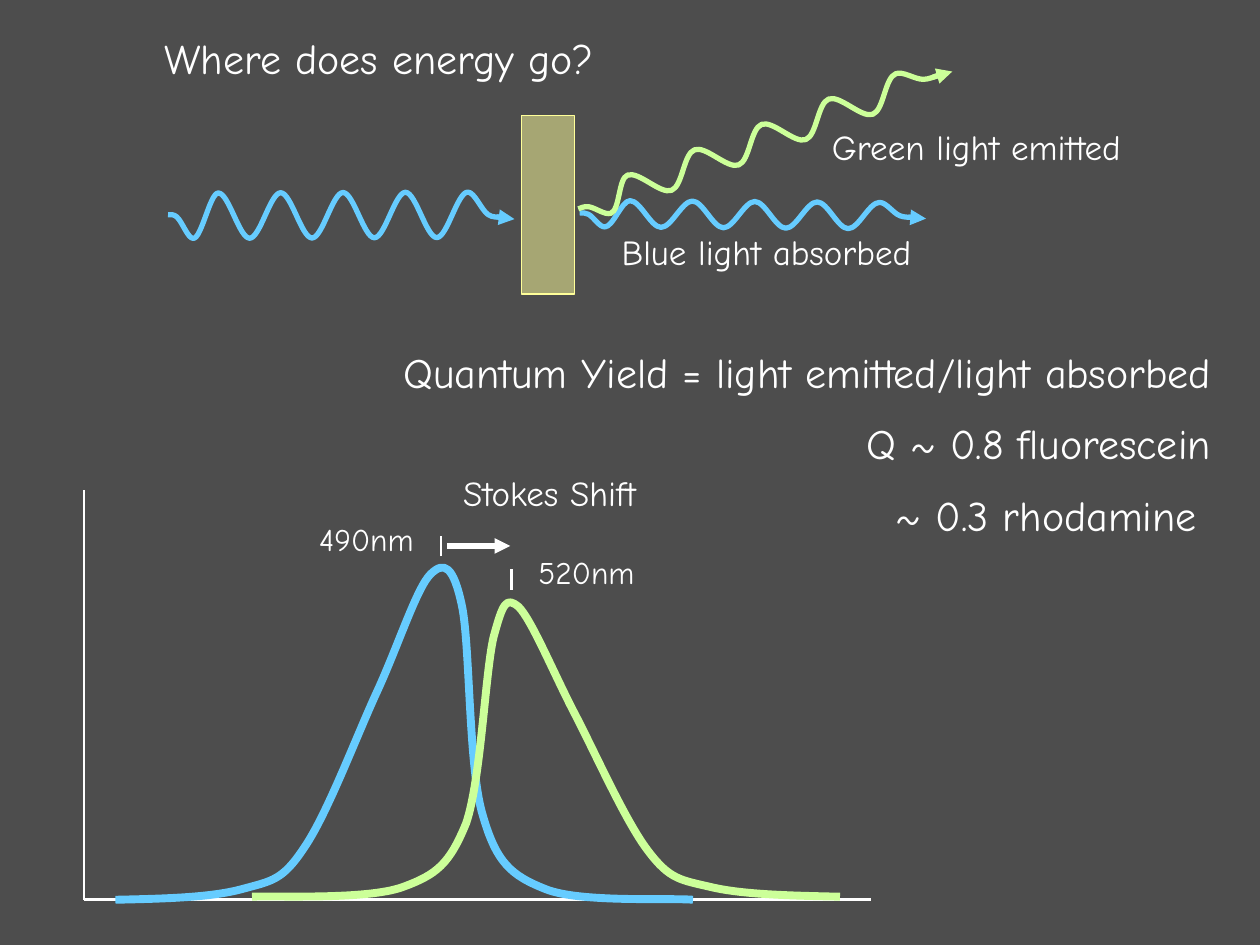
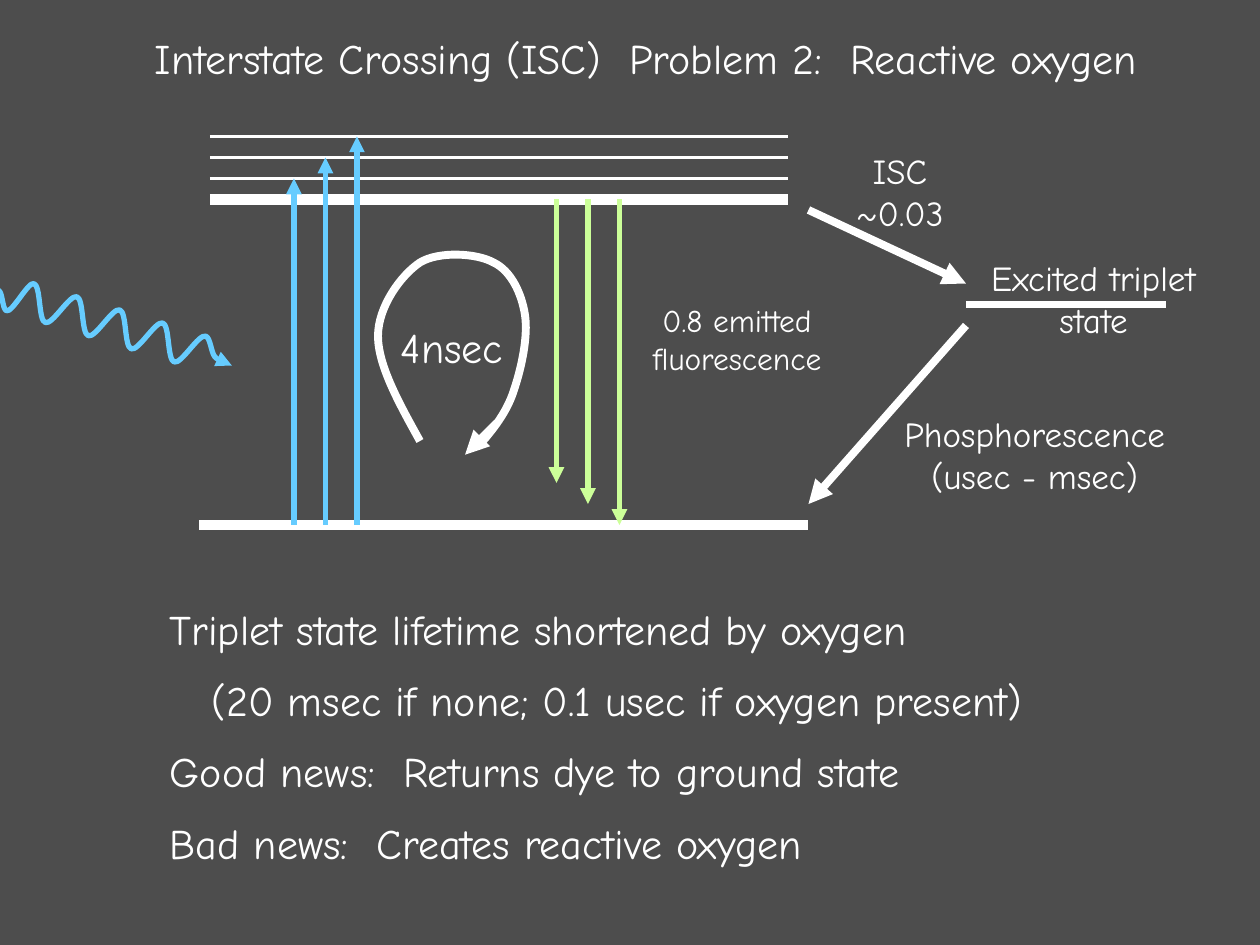
from dataclasses import dataclass
from math import cos, radians, sin

from lxml import etree
from pptx import Presentation
from pptx.dml.color import RGBColor
from pptx.enum.shapes import MSO_CONNECTOR, MSO_SHAPE
from pptx.enum.text import MSO_ANCHOR, PP_ALIGN
from pptx.oxml.ns import qn
from pptx.util import Inches, Pt


@dataclass(frozen=True)
class Theme:
    background: str = "4D4D4D"
    white: str = "FFFFFF"
    blue: str = "66CCFF"
    green: str = "CCFF99"
    sample: str = "FFFF99"
    font: str = "Comic Neue"
    title: int = 24
    label: int = 20
    small: int = 18
    thin: float = 1.5
    medium: float = 3
    thick: float = 4.5
    heavy: float = 6


THEME = Theme()
COLUMNS, ROWS = 120, 90
SLIDE_WIDTH, SLIDE_HEIGHT = Inches(10), Inches(7.5)

WAVE_LENGTH = 31.8
WAVE_KNOTS = [
    (0, -0.05, 0), (0.84, 0.05, 0.42), (2.4, 1, 0),
    *[(4.8 + 2.97 * turn, 1 if turn % 2 else -1, 0) for turn in range(9)],
    (30.5, 0, 0.31), (WAVE_LENGTH, 0.1, 0),
]

ABSORPTION = [
    (11, 85.7), (15.5, 85.6), (20, 85.5), (23, 84.7),
    (25.9, 83.9), (26.9, 83.9), (29, 80.7),
    (31.2, 77.5), (34, 70), (36, 65.7),
    (38, 61.3), (39.7, 56), (41, 54.7),
    (42.3, 53.4), (43.2, 53.9), (44, 57.7),
    (44.8, 61.5), (44.6, 73.2), (46, 77.7),
    (47.3, 82.2), (48.7, 83.4), (52, 84.7),
    (55.3, 86), (63.7, 85.5), (66, 85.7),
]

EMISSION = [
    (80, 85.4), (75.4, 85.3), (70.8, 85.2), (67.8, 84.5),
    (64.8, 83.8), (63.8, 83.8), (61.7, 81),
    (59.5, 78.1), (56.6, 71.5), (54.6, 67.7),
    (52.6, 63.8), (50.6, 59), (49.4, 57.8),
    (48.2, 56.8), (47.9, 57.4), (47, 60.7),
    (46.2, 64.2), (45.8, 74.3), (44.4, 78.4),
    (42.8, 82.3), (41.6, 83.3), (38.3, 84.5),
    (34.9, 85.7), (26.4, 85.3), (24, 85.4),
]

LIFETIME_LOOP = [
    (40, 42), (38, 38.4), (36, 34.8), (36, 32),
    (36, 29.2), (38.2, 26.2), (40, 25),
    (41.8, 23.9), (45.4, 24.1), (47, 25),
    (48.7, 25.8), (49.7, 28), (50, 30),
    (50.3, 32), (49.7, 34.9), (49, 37),
    (48.4, 39), (47.2, 40.6), (46, 42),
]


def column(value):
    return round(value * SLIDE_WIDTH / COLUMNS)


def row(value):
    return round(value * SLIDE_HEIGHT / ROWS)


def color(value):
    return RGBColor.from_string(value)


def set_line(shape, line_color, width):
    shape.line.color.rgb = color(line_color)
    shape.line.width = Pt(width)


def add_slide(presentation):
    slide = presentation.slides.add_slide(presentation.slide_layouts[6])
    slide.background.fill.solid()
    slide.background.fill.fore_color.rgb = color(THEME.background)
    return slide


def add_line(slide, start, end, line_color=THEME.white, width=THEME.thin, arrow=False):
    connector = slide.shapes.add_connector(
        MSO_CONNECTOR.STRAIGHT,
        column(start[0]), row(start[1]), column(end[0]), row(end[1]),
    )
    set_line(connector, line_color, width)
    if arrow:
        etree.SubElement(connector.line._get_or_add_ln(), qn("a:tailEnd"), type="triangle")
    etree.SubElement(connector._element.spPr, qn("a:effectLst"))


def bend_segments(curve):
    segments = list(curve._element.iter(qn("a:lnTo")))
    outline = segments[0].getparent()
    for first in range(0, len(segments), 3):
        bend = etree.SubElement(outline, qn("a:cubicBezTo"))
        for segment in segments[first:first + 3]:
            bend.append(segment[0])
            outline.remove(segment)


def add_curve(slide, controls, line_color, width):
    vertices = [(column(x), row(y)) for x, y in controls]
    builder = slide.shapes.build_freeform(*vertices[0])
    builder.add_line_segments(vertices[1:], close=False)
    curve = builder.convert_to_shape()
    bend_segments(curve)
    curve.shadow.inherit = False
    curve.fill.background()
    set_line(curve, line_color, width)


def add_wave(slide, center, amplitude, line_color, angle=0, scale=1):
    turn = radians(angle)

    def place(x, y):
        along, across = (x - WAVE_LENGTH / 2) * scale, y * amplitude
        return (center[0] + along * cos(turn) - across * sin(turn),
                center[1] + along * sin(turn) + across * cos(turn))

    controls = [place(*WAVE_KNOTS[0][:2])]
    for (x1, y1, slope1), (x2, y2, slope2) in zip(WAVE_KNOTS, WAVE_KNOTS[1:]):
        third = (x2 - x1) / 3
        controls += [
            place(x1 + third, y1 + slope1 * third),
            place(x2 - third, y2 - slope2 * third),
            place(x2, y2),
        ]
    add_curve(slide, controls, line_color, THEME.medium)
    add_line(slide, place(WAVE_LENGTH - 0.5, 0.1), place(WAVE_LENGTH + 1.2, 0.2),
             line_color, THEME.medium, arrow=True)


def add_text(slide, lines, box, size=THEME.label, align=PP_ALIGN.CENTER, gap=0):
    left, top, width, height = box
    shape = slide.shapes.add_textbox(column(left), row(top), column(width), row(height))
    text_frame = shape.text_frame
    text_frame.word_wrap = True
    text_frame.vertical_anchor = MSO_ANCHOR.MIDDLE
    text_frame.text = "\n".join(lines)
    for index, paragraph in enumerate(text_frame.paragraphs):
        paragraph.alignment = align
        if index and gap:
            paragraph.space_before = Pt(gap)
        for run in paragraph.runs:
            run.font.name = THEME.font
            run.font.size = Pt(size)
            run.font.color.rgb = color(THEME.white)
    return text_frame


def add_title(slide, text, left, width):
    add_text(slide, [text], (left, 2.05, width, 6.8), THEME.title)


def add_sample(slide, box):
    left, top, width, height = box
    sample = slide.shapes.add_shape(
        MSO_SHAPE.RECTANGLE, column(left), row(top), column(width), row(height))
    sample.shadow.inherit = False
    sample.fill.solid()
    sample.fill.fore_color.rgb = color(THEME.sample)
    fill_color = sample._element.spPr.find(qn("a:solidFill")).find(qn("a:srgbClr"))
    etree.SubElement(fill_color, qn("a:alpha"), val="50000")
    set_line(sample, THEME.sample, 0.75)


def add_peak_label(slide, text, peak, box):
    x, y = peak
    add_line(slide, (x, y), (x, y - 2))
    add_text(slide, [text], box, THEME.small)


def build_energy_slide(presentation):
    slide = add_slide(presentation)
    add_sample(slide, (49.7, 11, 5, 17))
    add_wave(slide, (31.9, 20.5), 2.16, THEME.blue, angle=-0.2)
    add_wave(slide, (71.1, 20.45), 1.26, THEME.blue, angle=0.4)
    add_text(slide, ["Blue light absorbed"], (56.75, 21, 32.5, 5.9))

    origin = (8, 85.7)
    add_line(slide, (8, 46.7), origin)
    add_line(slide, origin, (83, 85.7))
    add_curve(slide, ABSORPTION, THEME.blue, THEME.thick)
    add_peak_label(slide, "490nm", (42, 53), (29, 48.6, 11.8, 5.4))
    add_curve(slide, EMISSION, THEME.green, THEME.thick)
    add_peak_label(slide, "520nm", (48.7, 56.15), (49.95, 51.75, 11.8, 5.4))

    add_wave(slide, (72.2, 13.5), 1.42, THEME.green, angle=-20.7, scale=1.15)
    add_text(slide, ["Green light emitted"], (76.45, 11, 33.1, 5.9))
    add_line(slide, (42.6, 52), (48.6, 52), width=THEME.medium, arrow=True)
    add_text(slide, ["Stokes Shift"], (41, 44, 22.7, 5.9))
    add_title(slide, "Where does energy go?", 12.95, 46.3)
    add_text(slide, [
        "Quantum Yield = light emitted/light absorbed",
        "Q ~ 0.8 fluorescein",
        "~ 0.3 rhodamine ",
    ], (28.9, 30.45, 87.6, 23.5), THEME.title, PP_ALIGN.RIGHT, gap=12)


def build_crossing_slide(presentation):
    slide = add_slide(presentation)
    ground, excited = 50, 19
    add_line(slide, (19, ground), (77, ground), width=THEME.heavy)
    add_wave(slide, (10.4, 30.9), 1.62, THEME.blue, angle=17, scale=0.72)
    add_line(slide, (20, excited), (75, excited), width=THEME.heavy)
    for step in range(3):
        level = excited - 2 * (step + 1)
        absorbed, emitted = 28 + 3 * step, 53 + 3 * step
        add_line(slide, (20, level), (75, level))
        add_line(slide, (absorbed, ground), (absorbed, level),
                 THEME.blue, THEME.medium, arrow=True)
        add_line(slide, (emitted, excited), (emitted, 46 + 2 * step),
                 THEME.green, THEME.medium, arrow=True)

    add_curve(slide, LIFETIME_LOOP, THEME.white, THEME.thick)
    add_line(slide, (47.3, 40.3), (44.3, 43.3), width=THEME.thick, arrow=True)
    add_text(slide, ["4nsec"], (36.45, 29.6, 13.2, 6.8), THEME.title)
    add_title(slide, "Interstate Crossing (ISC)  Problem 2:  Reactive oxygen", 8.75, 105.5)

    add_line(slide, (77, 20), (92, 27), width=THEME.thick, arrow=True)
    add_line(slide, (92, 29), (111, 29), width=THEME.thick)
    add_line(slide, (92, 31), (77, 48), width=THEME.thick, arrow=True)
    add_text(slide, ["ISC", "~0.03"], (80, 12.92, 11.4, 10.6))
    add_text(slide, ["Excited triplet", "state"], (91.3, 23.12, 25.7, 10.6))
    add_text(slide, ["Phosphorescence", "(usec - msec)"], (84.15, 38, 28.8, 10.6))
    outcome = add_text(slide, [
        "Triplet state lifetime shortened by oxygen",
        "(20 msec if none; 0.1 usec if oxygen present)",
        "Good news:  Returns dye to ground state",
        "Bad news:  Creates reactive oxygen",
    ], (15, 56.15, 90.2, 27.8), THEME.title, PP_ALIGN.LEFT, gap=12)
    outcome.paragraphs[1]._p.get_or_add_pPr().set("marL", str(column(4)))
    add_text(slide, ["0.8 emitted", "fluorescence"], (60, 27.5, 20.4, 9.6), THEME.small)


def main():
    presentation = Presentation()
    presentation.slide_width = SLIDE_WIDTH
    presentation.slide_height = SLIDE_HEIGHT
    build_energy_slide(presentation)
    build_crossing_slide(presentation)
    presentation.save("out.pptx")


if __name__ == "__main__":
    main()
